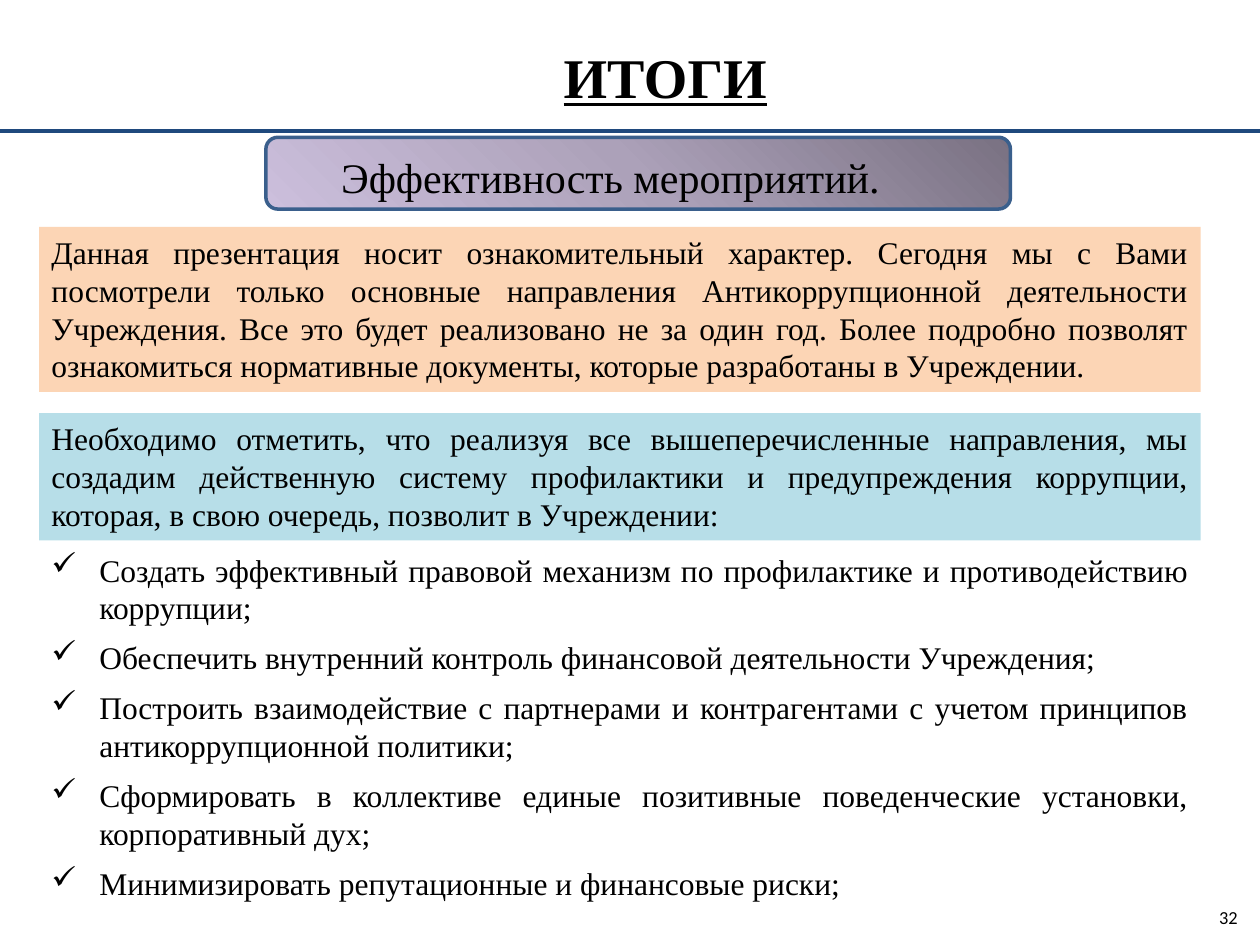
from copy import deepcopy
from dataclasses import dataclass

from lxml.etree import SubElement
from pptx import Presentation
from pptx.dml.color import RGBColor
from pptx.enum.shapes import MSO_CONNECTOR, MSO_SHAPE
from pptx.enum.text import MSO_ANCHOR, PP_ALIGN
from pptx.oxml.ns import qn
from pptx.util import Inches, Pt

TITLE = "ИТОГИ"
SUBTITLE = "Эффективность мероприятий."
PANELS = [
    ("Данная презентация носит ознакомительный характер. Сегодня мы с Вами посмотрели "
     "только основные направления Антикоррупционной деятельности Учреждения. Все это "
     "будет реализовано не за один год. Более подробно позволят ознакомиться нормативные "
     "документы, которые разработаны в Учреждении.", "FCD5B5", 24, 17.47),
    ("Необходимо отметить, что реализуя все вышеперечисленные направления, мы создадим "
     "действенную систему профилактики и предупреждения коррупции, которая, в свою "
     "очередь, позволит в Учреждении:", "B7DEE8", 43.73, 13.47),
]
GOALS = [
    "Создать эффективный правовой механизм по профилактике и противодействию коррупции;",
    "Обеспечить внутренний контроль финансовой деятельности Учреждения;",
    "Построить взаимодействие с партнерами и контрагентами с учетом принципов "
    "антикоррупционной политики;",
    "Сформировать в коллективе единые позитивные поведенческие установки, корпоративный дух;",
    "Минимизировать репутационные и финансовые риски;",
]
PAGE_NUMBER = "32"


@dataclass(frozen=True)
class Theme:
    font: str = "Times New Roman"
    number_font: str = "Calibri"
    ink: str = "000000"
    rule: str = "1F497D"
    badge_line: str = "3A5F8C"
    badge_stops: tuple = ((0, "797182"), (0.5, "ACA1B9"), (1, "CCBFDC"))
    title: float = 32
    subtitle: float = 24
    body: float = 18
    number: float = 10.5
    stroke: float = 2
    goal_gap: float = 7


theme = Theme()
deck = Presentation()
deck.slide_width, deck.slide_height = Inches(10), Inches(7.5)
page = deck.slides.add_slide(deck.slide_layouts[6])
COLUMN, ROW = deck.slide_width / 100, deck.slide_height / 100
BODY_LEFT, BODY_WIDTH = 3.1, 92.2
BADGE_TOP, BADGE_HEIGHT = 14.53, 7.6


def area(left, top, width, height):
    return [round(value) for value in (left * COLUMN, top * ROW, width * COLUMN, height * ROW)]


def add_box(*place):
    return page.shapes.add_textbox(*area(*place))


def add_panel(kind, *place):
    panel = page.shapes.add_shape(kind, *area(*place))
    panel.shadow.inherit = False
    return panel


def write(box, lines, size, align, font=theme.font, wrap=True):
    frame = box.text_frame
    frame.word_wrap = wrap
    frame.vertical_anchor = MSO_ANCHOR.TOP
    frame.text = "\n".join(lines)
    for para in frame.paragraphs:
        para.alignment = align
        for span in para.runs:
            span.font.name = font
            span.font.size = Pt(size)
            span.font.color.rgb = RGBColor.from_string(theme.ink)
    return frame.paragraphs


def space_heading(para):
    para.line_spacing = 1.15
    para.space_after = Pt(10)


def indent(para, left, first):
    properties = para._p.get_or_add_pPr()
    properties.set("marL", str(Inches(left)))
    properties.set("indent", str(Inches(first)))
    return properties


rule_y = round(13.87 * ROW)
rule = page.shapes.add_connector(MSO_CONNECTOR.STRAIGHT, 0, rule_y, deck.slide_width, rule_y)
rule.line.color.rgb = RGBColor.from_string(theme.rule)
rule.line.width = Pt(theme.stroke)
SubElement(rule._element.spPr, qn("a:effectLst"))

write(add_box(95, 95.2, 5, 5.33), [PAGE_NUMBER], theme.number, PP_ALIGN.CENTER, theme.number_font)

title = write(add_box(1.2, 2.8, 98.3, 9.07), [TITLE], theme.title, PP_ALIGN.CENTER)[0]
space_heading(title)
indent(title, 0, 0.49)
title.runs[0].font.bold = True
title.runs[0].font.underline = True

badge = add_panel(MSO_SHAPE.ROUNDED_RECTANGLE, 21.1, BADGE_TOP, 59.1, BADGE_HEIGHT)
badge.line.color.rgb = RGBColor.from_string(theme.badge_line)
badge.line.width = Pt(theme.stroke)
badge.fill.gradient()
badge.fill.gradient_angle = 225
stop_list = badge._element.spPr.find(".//" + qn("a:gsLst"))
stop_list.append(deepcopy(stop_list[0]))
for stop, (position, color) in zip(badge.fill.gradient_stops, theme.badge_stops):
    stop.position = position
    stop.color.rgb = RGBColor.from_string(color)

label = add_box(25, BADGE_TOP, 46.9, BADGE_HEIGHT)
space_heading(write(label, [SUBTITLE], theme.subtitle, PP_ALIGN.CENTER, wrap=False)[0])

for text, color, top, height in PANELS:
    panel = add_panel(MSO_SHAPE.RECTANGLE, BODY_LEFT, top, BODY_WIDTH, height)
    panel.fill.solid()
    panel.fill.fore_color.rgb = RGBColor.from_string(color)
    panel.line.fill.background()
    write(panel, [text], theme.body, PP_ALIGN.JUSTIFY)

goals = write(add_box(BODY_LEFT, 57.6, BODY_WIDTH, 39.07), GOALS, theme.body, PP_ALIGN.JUSTIFY)
for para in goals:
    para.space_after = Pt(theme.goal_gap)
    SubElement(indent(para, 0.38, -0.38), qn("a:buChar")).set("char", "✓")

deck.save("out.pptx")
